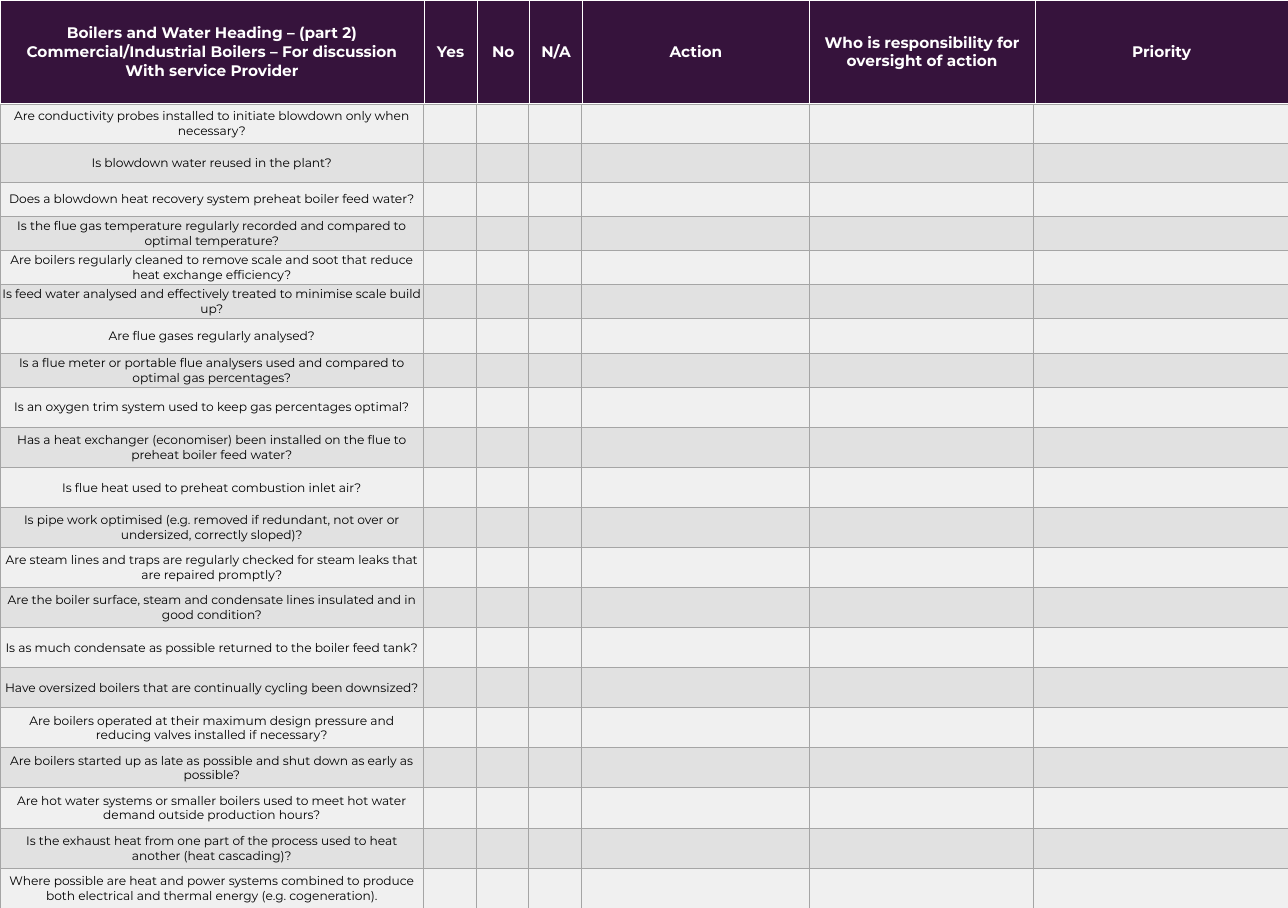
from lxml import etree
from pptx import Presentation
from pptx.dml.color import RGBColor
from pptx.enum.text import MSO_ANCHOR, PP_ALIGN
from pptx.oxml.ns import qn
from pptx.util import Cm, Pt

FONT = "Montserrat"
HEADER_HEIGHT = 4.8
HEADER_COLS = [19.56, 2.46, 2.41, 2.46, 10.44, 10.44, 11.66]
CHECKLIST_COLS = [19.56, 2.41, 2.41, 2.46, 10.52, 10.36, 11.73]
CHECKLIST_ROWS = [1.8] * 2 + [1.58] * 6 + [1.85] * 13

HEADINGS = [
    "Boilers and Water Heading – (part 2)\n"
    "Commercial/Industrial Boilers – For discussion\n"
    "With service Provider",
    "Yes",
    "No",
    "N/A",
    "Action",
    "Who is responsibility for oversight of action",
    "Priority",
]
QUESTIONS = [
    "Are conductivity probes installed to initiate blowdown only when necessary?",
    "Is blowdown water reused in the plant?",
    "Does a blowdown heat recovery system preheat boiler feed water?",
    "Is the flue gas temperature regularly recorded and compared to optimal temperature?",
    "Are boilers regularly cleaned to remove scale and soot that reduce heat exchange efficiency?",
    "Is feed water analysed and effectively treated to minimise scale build up?",
    "Are flue gases regularly analysed?",
    "Is a flue meter or portable flue analysers used and compared to optimal gas percentages?",
    "Is an oxygen trim system used to keep gas percentages optimal?",
    "Has a heat exchanger (economiser) been installed on the flue to preheat boiler feed water?",
    "Is flue heat used to preheat combustion inlet air?",
    "Is pipe work optimised (e.g. removed if redundant, not over or undersized, correctly sloped)?",
    "Are steam lines and traps are regularly checked for steam leaks that are repaired promptly?",
    "Are the boiler surface, steam and condensate lines insulated and in good condition?",
    "Is as much condensate as possible returned to the boiler feed tank?",
    "Have oversized boilers that are continually cycling been downsized?",
    "Are boilers operated at their maximum design pressure and reducing valves installed if necessary?",
    "Are boilers started up as late as possible and shut down as early as possible?",
    "Are hot water systems or smaller boilers used to meet hot water demand outside production hours?",
    "Is the exhaust heat from one part of the process used to heat another (heat cascading)?",
    "Where possible are heat and power systems combined to produce both electrical and "
    "thermal energy (e.g. cogeneration).",
]


def rgb(value):
    return RGBColor.from_string(value)


def set_borders(cell, color, widths):
    tc_pr = cell._tc.get_or_add_tcPr()
    for side, width in zip("LRTB", widths):
        ln = etree.SubElement(tc_pr, qn(f"a:ln{side}"), w=str(Pt(width)))
        fill = etree.SubElement(ln, qn("a:solidFill"))
        etree.SubElement(fill, qn("a:srgbClr"), val=color)


def set_fill(cell, color):
    cell.fill.solid()
    cell.fill.fore_color.rgb = rgb(color)


def set_text(cell, text, color, **font):
    cell.vertical_anchor = MSO_ANCHOR.MIDDLE
    tf = cell.text_frame
    tf.text = text
    for p in tf.paragraphs:
        p.alignment = PP_ALIGN.CENTER
        for r in p.runs:
            for name, value in {"name": FONT, **font}.items():
                setattr(r.font, name, value)
            r.font.color.rgb = rgb(color)


def add_grid(slide, box, cols, rows):
    table = slide.shapes.add_table(len(rows), len(cols), *box).table
    table.first_row = table.horz_banding = False
    width, height = box[2:]
    for column, share in zip(table.columns, cols):
        column.width = int(width * share / sum(cols))
    for row, share in zip(table.rows, rows):
        row.height = int(height * share / sum(rows))
    return table


def add_header(slide, box):
    table = add_grid(slide, box, HEADER_COLS, [1])
    for cell, heading in zip(table.iter_cells(), HEADINGS):
        set_borders(cell, "FFFFFF", [1, 1, 1, 3])
        set_fill(cell, "36133C")
        set_text(cell, heading, "FFFFFF", size=Pt(20), bold=True)


def add_checklist(slide, box):
    table = add_grid(slide, box, CHECKLIST_COLS, CHECKLIST_ROWS)
    margins = {"margin_left": Cm(0.03), "margin_right": Cm(0.03),
               "margin_top": Cm(0.03), "margin_bottom": Cm(0)}
    for i, (row, question) in enumerate(zip(table.rows, QUESTIONS)):
        for cell in row.cells:
            set_borders(cell, "A5A5A5", [1] * 4)
            set_fill(cell, ["F0F0F0", "E1E1E1"][i % 2])
        cell = row.cells[0]
        set_text(cell, question, "000000", size=Pt(16))
        for name, value in margins.items():
            setattr(cell, name, value)


def main():
    prs = Presentation()
    prs.slide_width, prs.slide_height = Cm(59.44), Cm(41.91)
    slide = prs.slides.add_slide(prs.slide_layouts[6])
    top = Cm(HEADER_HEIGHT)
    add_header(slide, (0, 0, prs.slide_width, top))
    add_checklist(slide, (0, top, prs.slide_width, prs.slide_height - top))
    prs.save("out.pptx")


if __name__ == "__main__":
    main()
